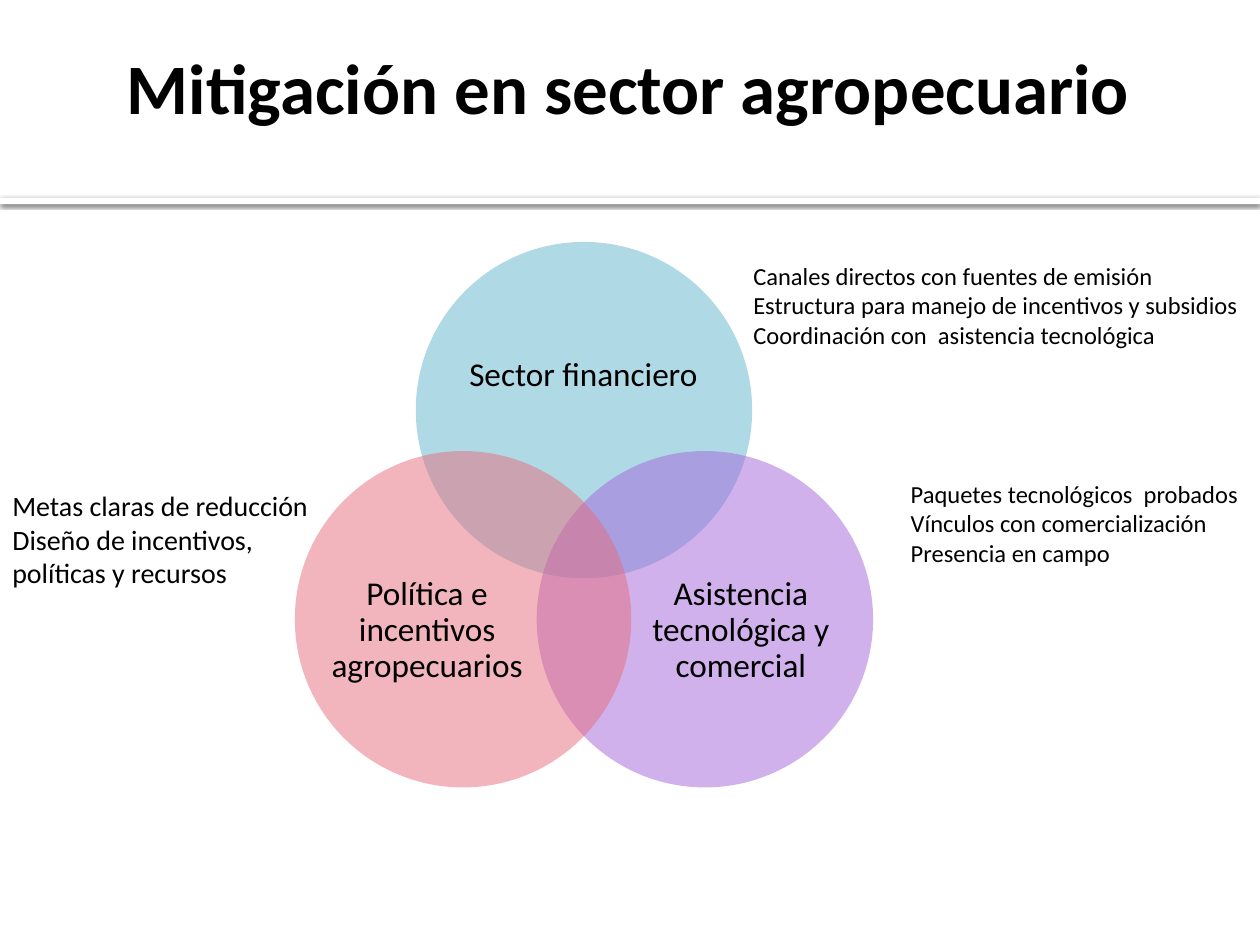
from dataclasses import dataclass

from lxml.etree import SubElement
from pptx import Presentation
from pptx.dml.color import RGBColor
from pptx.enum.shapes import MSO_SHAPE
from pptx.enum.text import MSO_ANCHOR, PP_ALIGN
from pptx.oxml.ns import qn
from pptx.util import Inches, Pt


@dataclass(frozen=True)
class Theme:
    font: str = "Calibri"
    text: str = "000000"
    band: str = "FFFFFF"
    teal: str = "60B5CC"
    purple: str = "A465DA"
    red: str = "E66C7D"
    title: float = 40.5
    label: float = 19
    note: float = 14
    large_note: float = 16


@dataclass(frozen=True)
class Box:
    left: float
    top: float
    width: float
    height: float


@dataclass(frozen=True)
class Circle:
    left: float
    top: float
    color: str
    label: str
    label_box: Box


@dataclass(frozen=True)
class Note:
    box: Box
    size: float
    lines: tuple[str, ...]
    wrap: bool = True


THEME = Theme()
DIAMETER = 2.67
LOWER_TOP = 3.58

CIRCLES = (
    Circle(3.3, 1.92, THEME.teal, "Sector financiero", Box(3.65, 2.38, 1.96, 1.2)),
    Circle(4.26, LOWER_TOP, THEME.purple, "Asistencia tecnológica y comercial",
           Box(5.08, 4.27, 1.6, 1.47)),
    Circle(2.34, LOWER_TOP, THEME.red, "Política e incentivos agropecuarios",
           Box(2.59, 4.27, 1.6, 1.47)),
)

NOTES = (
    Note(Box(5.88, 2.02, 4.12, 1.11), THEME.note,
         ("Canales directos con fuentes de emisión",
          "Estructura para manejo de incentivos y subsidios",
          "Coordinación con  asistencia tecnológica"), wrap=False),
    Note(Box(7.13, 3.75, 2.87, 1.11), THEME.note,
         ("Paquetes tecnológicos  probados",
          "Vínculos con comercialización",
          "Presencia en campo")),
    Note(Box(0, 3.83, 2.87, 0.91), THEME.large_note,
         ("Metas claras de reducción",
          "Diseño de incentivos, políticas y recursos")),
)


def add_filled(s, kind: MSO_SHAPE, box: Box, color: str):
    sp = s.shapes.add_shape(kind, Inches(box.left), Inches(box.top),
                            Inches(box.width), Inches(box.height))
    sp.shadow.inherit = False
    sp.fill.solid()
    sp.fill.fore_color.rgb = RGBColor.from_string(color)
    sp.line.fill.background()
    return sp


def add_text(s, box: Box, lines: tuple[str, ...], size: float, *,
             bold: bool = False, wrap: bool = True,
             anchor: MSO_ANCHOR = MSO_ANCHOR.TOP,
             align: PP_ALIGN = PP_ALIGN.LEFT, spacing: float = 1.0,
             insets: tuple[float, ...] = (0.1, 0.05, 0.1, 0.05)) -> None:
    sp = s.shapes.add_textbox(Inches(box.left), Inches(box.top),
                              Inches(box.width), Inches(box.height))
    tf = sp.text_frame
    tf.word_wrap = wrap
    tf.vertical_anchor = anchor
    tf.margin_left, tf.margin_top, tf.margin_right, tf.margin_bottom = map(Inches, insets)
    for i, line in enumerate(lines):
        p = tf.add_paragraph() if i else tf.paragraphs[0]
        p.alignment = align
        p.line_spacing = spacing
        r = p.add_run()
        r.text = line
        r.font.name = THEME.font
        r.font.size = Pt(size)
        r.font.bold = bold
        r.font.color.rgb = RGBColor.from_string(THEME.text)


def set_alpha(color_element, percent: int) -> None:
    SubElement(color_element, qn("a:alpha"), val=str(percent * 1000))


def add_band(s) -> None:
    sp = add_filled(s, MSO_SHAPE.RECTANGLE, Box(0, 1.57, 10, 0.05), THEME.band)
    effects = sp._element.spPr.find(qn("a:effectLst"))
    shadow = SubElement(effects, qn("a:outerShdw"), blurRad=str(Pt(2.5)),
                        dist=str(Pt(0.8)), dir=str(90 * 60000), rotWithShape="0")
    set_alpha(SubElement(shadow, qn("a:srgbClr"), val=THEME.text), 60)


def add_circle(s, circle: Circle) -> None:
    sp = add_filled(s, MSO_SHAPE.OVAL,
                    Box(circle.left, circle.top, DIAMETER, DIAMETER), circle.color)
    set_alpha(sp._element.spPr.find(qn("a:solidFill"))[0], 50)
    add_text(s, circle.label_box, (circle.label,), THEME.label,
             anchor=MSO_ANCHOR.MIDDLE, align=PP_ALIGN.CENTER, spacing=0.9,
             insets=(0, 0, 0, 0))


def main() -> None:
    prs = Presentation()
    prs.slide_width, prs.slide_height = Inches(10), Inches(7.5)
    s = prs.slides.add_slide(prs.slide_layouts[6])

    # Header
    add_band(s)
    add_text(s, Box(0.91, 0, 8.17, 1.37), ("Mitigación en sector agropecuario",),
             THEME.title, bold=True, anchor=MSO_ANCHOR.MIDDLE,
             insets=(0.1, 0.05, 0.05, 0.05))

    # Venn diagram
    for circle in CIRCLES:
        add_circle(s, circle)

    # Notes beside the circles
    for note in NOTES:
        add_text(s, note.box, note.lines, note.size, wrap=note.wrap)

    prs.save("out.pptx")


if __name__ == "__main__":
    main()
